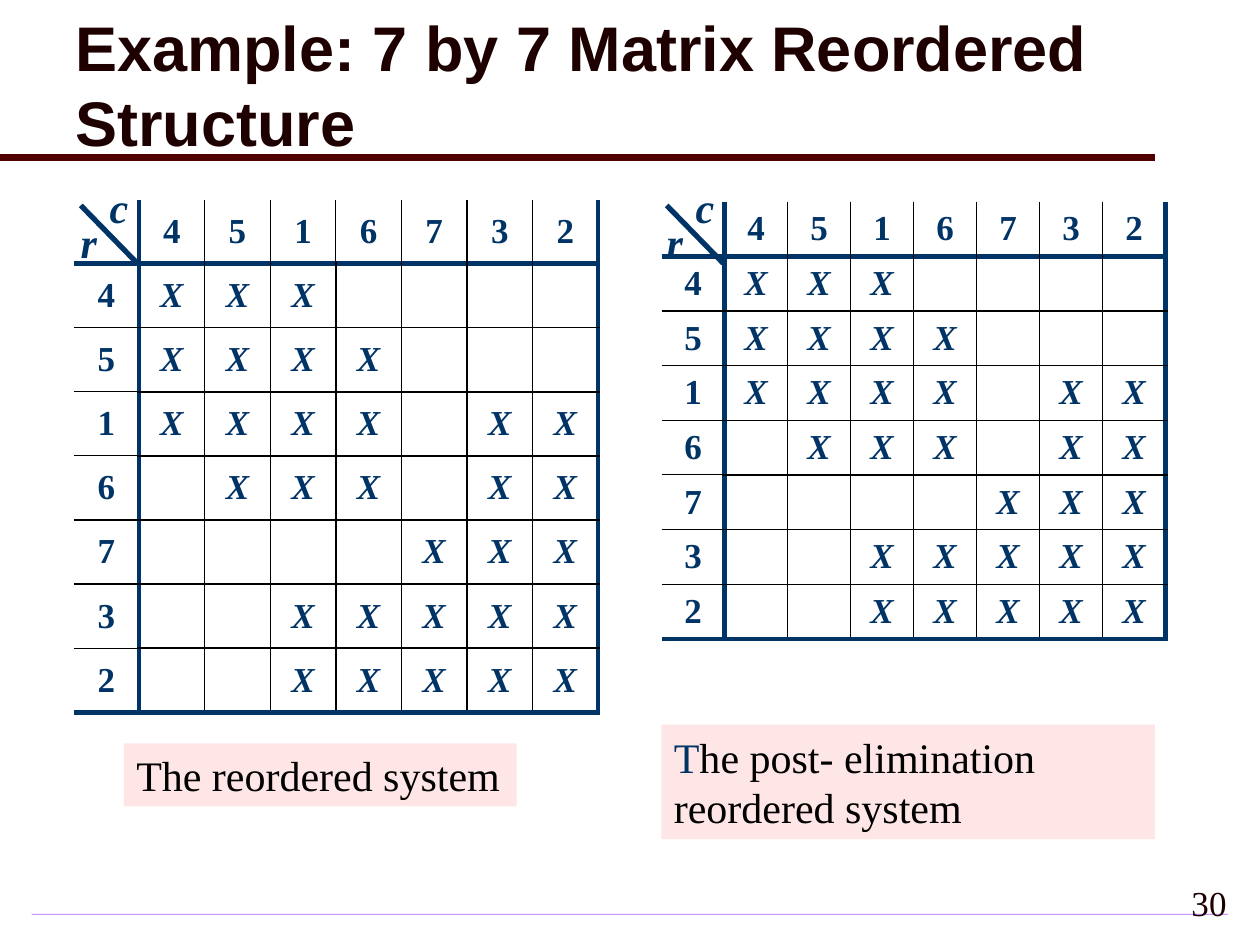
from dataclasses import dataclass
from typing import NamedTuple

from lxml.etree import SubElement as Sub
from pptx import Presentation as Deck
from pptx.dml.color import RGBColor as Rgb
from pptx.enum.shapes import MSO_CONNECTOR as Link, MSO_SHAPE as Form
from pptx.enum.text import MSO_ANCHOR as Anchor, MSO_AUTO_SIZE as Fit, PP_ALIGN as Align
from pptx.oxml.ns import qn
from pptx.util import Pt


@dataclass(frozen=True)
class Theme:
    navy: str = "003366"
    black: str = "000000"
    dark: str = "1E0000"
    maroon: str = "500000"
    pink: str = "FFE6E6"
    lilac: str = "CC99FF"
    pale: str = "F3EBFF"
    serif: str = "Times New Roman"
    sans: str = "Arial"
    head: int = 36
    note: int = 24
    cell: int = 20
    thick: float = 3
    thin: float = 1
    fine: float = 0.75


class Box(NamedTuple):
    left: float
    top: float
    width: float
    height: float


class Span(NamedTuple):
    text: str
    size: int
    color: str
    bold: bool = False
    slant: bool = False
    font: str = "Times New Roman"


class Grid(NamedTuple):
    left: float
    top: float
    col: float
    row: float
    mark: float


class Note(NamedTuple):
    box: Box
    spans: list[Span]
    wrap: bool


T = Theme()
ORDER = "4516732"
FILLED = ["XXX....", "XXXX...", "XXXX.XX", ".XXX.XX", "....XXX", "..XXXXX", "..XXXXX"]
GRIDS = [Grid(42, 114, 37.5, 36.65, 39), Grid(378, 115.2, 36, 31.25, 373.8)]
NOTES = [
    Note(Box(70.8, 424.8, 224.4, 36), [Span("The reordered system", T.note, T.black)], False),
    Note(Box(378, 414, 282, 65.5), [
        Span("T", T.note, T.navy),
        Span("he post- elimination reordered system", T.note, T.black),
    ], True),
]


def write(frame, spans: list[Span], align: Align = Align.LEFT) -> None:
    para = frame.paragraphs[0]
    para.alignment = align
    for span in spans:
        run = para.add_run()
        run.text = span.text
        font = run.font
        font.name, font.size = span.font, Pt(span.size)
        font.bold, font.italic = span.bold, span.slant
        font.color.rgb = Rgb.from_string(span.color)


def place(box: Box) -> list[Pt]:
    return [Pt(n) for n in box]


def label(slide, box: Box, spans: list[Span], align: Align = Align.LEFT,
          anchor: Anchor = Anchor.TOP, wrap: bool = True, fit: Fit = Fit.SHAPE_TO_FIT_TEXT) -> None:
    frame = slide.shapes.add_textbox(*place(box)).text_frame
    frame.word_wrap, frame.auto_size = wrap, fit
    frame.vertical_anchor = anchor
    write(frame, spans, align)


def block(slide, box: Box):
    shape = slide.shapes.add_shape(Form.RECTANGLE, *place(box))
    shape.shadow.inherit = False
    shape.line.fill.background()
    return shape


def draw_note(slide, note: Note) -> None:
    shape = block(slide, note.box)
    shape.fill.solid()
    shape.fill.fore_color.rgb = Rgb.from_string(T.pink)
    frame = shape.text_frame
    frame.word_wrap, frame.auto_size = note.wrap, Fit.SHAPE_TO_FIT_TEXT
    frame.vertical_anchor = Anchor.MIDDLE
    write(frame, note.spans)


def stroke(slide, start: tuple[float, float], end: tuple[float, float],
           color: str, width: float) -> None:
    line = slide.shapes.add_connector(Link.STRAIGHT, *(Pt(n) for n in start + end))
    line.line.color.rgb = Rgb.from_string(color)
    line.line.width = Pt(width)
    Sub(line._element.spPr, qn("a:effectLst"))


def edge(props, side: str, rank: int, cross: int) -> None:
    heavy = rank in (1, len(ORDER) + 1)
    width = T.thick if heavy else T.thin if cross else T.fine
    line = Sub(props, qn(f"a:ln{side}"), w=str(int(Pt(width))))
    if rank == 0:
        Sub(line, qn("a:noFill"))
        return
    fill = Sub(line, qn("a:solidFill"))
    Sub(fill, qn("a:srgbClr"), val=T.navy if heavy else T.black)


def draw_grid(slide, grid: Grid) -> None:
    count = len(ORDER) + 1
    box = Box(grid.left, grid.top, grid.col * count, grid.row * count)
    table = slide.shapes.add_table(count, count, *place(box)).table
    table.first_row = table.horz_banding = False
    for col in table.columns:
        col.width = Pt(grid.col)
    for row in table.rows:
        row.height = Pt(grid.row)
    lines = ["." + ORDER] + [name + marks for name, marks in zip(ORDER, FILLED)]
    for r, text in enumerate(lines):
        for c, char in enumerate(text):
            cell = table.cell(r, c)
            props = cell._tc.get_or_add_tcPr()
            for side, rank, cross in (("L", c, r), ("R", c + 1, r), ("T", r, c), ("B", r + 1, c)):
                edge(props, side, rank, cross)
            cell.fill.background()
            cell.vertical_anchor = Anchor.MIDDLE
            if char != ".":
                span = Span(char, T.cell, T.navy, True, char == "X")
                write(cell.text_frame, [span], Align.CENTER)


def draw_mark(slide, left: float) -> None:
    for char, shift, top in (("r", 0, 120.2), ("c", 16.6, 100.1)):
        span = Span(char, T.note, T.navy, True, True)
        label(slide, Box(left + shift, top, 15.1, 36), [span])
    stroke(slide, (left + 39.5, 150.5), (left + 7.2, 117.4), T.navy, T.thick)


def draw_base(slide) -> None:
    fill = block(slide, Box(18, 522, 684, 0.75)).fill
    fill.gradient()
    for stop, color in zip(fill.gradient_stops, (T.lilac, T.pale)):
        stop.color.rgb = Rgb.from_string(color)
    grad = fill._xPr.find(qn("a:gradFill"))
    grad.remove(grad.find(qn("a:lin")))
    shade = Sub(grad, qn("a:path"), path="shape")
    Sub(shade, qn("a:fillToRect"), l="50000", t="50000", r="50000", b="50000")


def main() -> None:
    deck = Deck()
    deck.slide_width, deck.slide_height = Pt(720), Pt(540)
    slide = deck.slides.add_slide(deck.slide_layouts[6])
    draw_base(slide)
    stroke(slide, (0, 90), (660, 90), T.maroon, 4)
    for grid, note in zip(GRIDS, NOTES):
        draw_grid(slide, grid)
        draw_note(slide, note)
    for grid in GRIDS:
        draw_mark(slide, grid.mark)
    title = Span("Example: 7 by 7 Matrix Reordered Structure", T.head, T.dark, True, font=T.sans)
    label(slide, Box(36, 0.7, 684, 94.3), [title], anchor=Anchor.MIDDLE)
    label(slide, Box(558, 498, 150, 36), [Span("30", T.cell, T.dark)],
          Align.RIGHT, Anchor.MIDDLE, False, Fit.NONE)
    deck.save("out.pptx")


if __name__ == "__main__":
    main()
